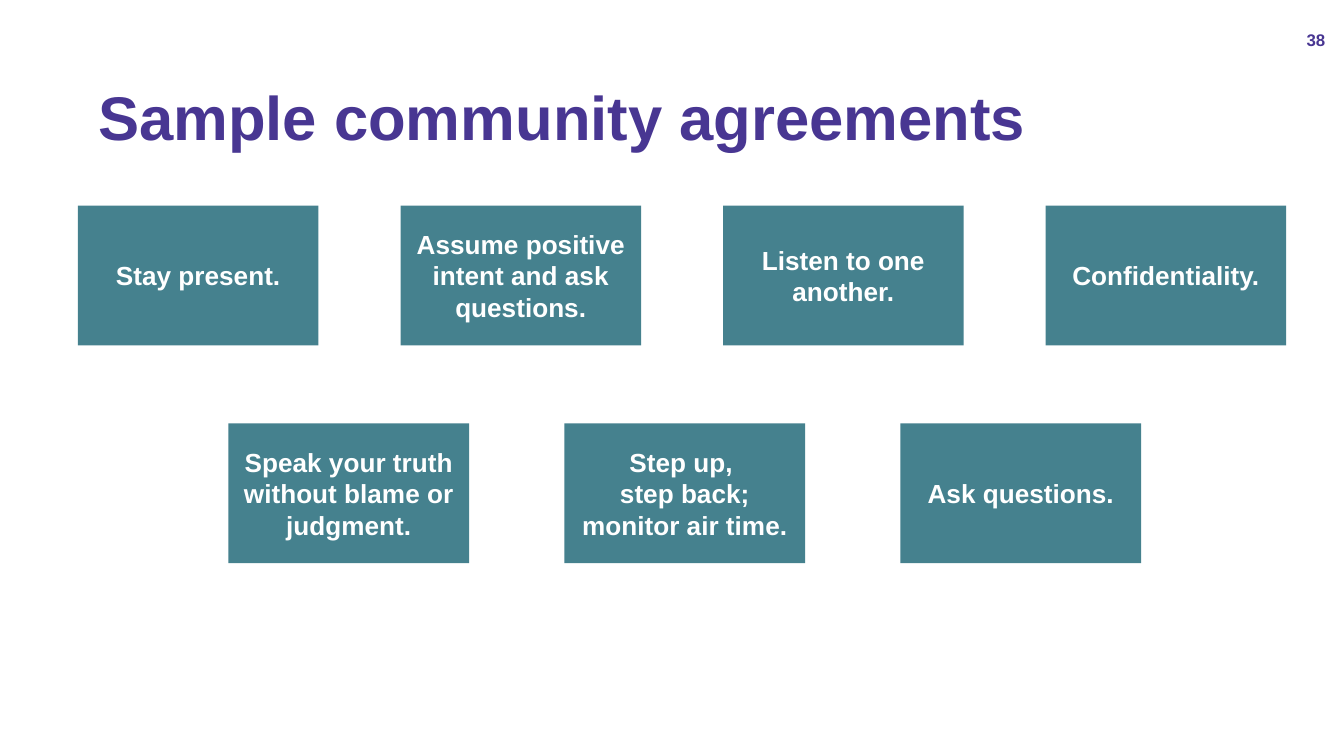
from dataclasses import dataclass

from pptx import Presentation
from pptx import util as u
from pptx.dml.color import RGBColor
from pptx.enum import shapes, text

COLORS = {"purple": "483692", "teal": "45818E", "white": "FFFFFF"}
FONT = "Arial"
CARD_W, CARD_H = 1.79, 1.04


@dataclass
class TextStyle:
    size: float
    color: str
    align: text.PP_ALIGN
    inset_x: float
    inset_y: float
    line_spacing: float = 1.0


@dataclass
class CardRow:
    left: float
    top: float
    pitch: float
    labels: list[str]


TITLE = TextStyle(33, "purple", text.PP_ALIGN.LEFT, 0.04, 0.02, 1.05)
CARD = TextStyle(14, "white", text.PP_ALIGN.CENTER, 0.1, 0.1)
NUMBER = TextStyle(9, "purple", text.PP_ALIGN.RIGHT, 0.07, 0.04)

ROWS = [
    CardRow(0.58, 1.53, 2.4, [
        "Stay present.",
        "Assume positive intent and ask questions.",
        "Listen to one another.",
        "Confidentiality.",
    ]),
    CardRow(1.7, 3.15, 2.5, [
        "Speak your truth without blame or judgment.",
        "Step up, \nstep back; monitor air time.",
        "Ask questions.",
    ]),
]


def rgb(name: str) -> RGBColor:
    return RGBColor.from_string(COLORS[name])


def write_text(sp, content: str, style: TextStyle) -> None:
    tf = sp.text_frame
    tf.word_wrap = True
    tf.vertical_anchor = text.MSO_ANCHOR.MIDDLE
    tf.margin_left = tf.margin_right = u.Inches(style.inset_x)
    tf.margin_top = tf.margin_bottom = u.Inches(style.inset_y)
    tf.text = content
    for p in tf.paragraphs:
        p.alignment = style.align
        p.line_spacing = style.line_spacing
        p.font.name = FONT
        p.font.size = u.Pt(style.size)
        p.font.bold = True
        p.font.color.rgb = rgb(style.color)


def add_label(s, left: float, top: float, width: float, height: float,
              content: str, style: TextStyle) -> None:
    sp = s.shapes.add_textbox(*map(u.Inches, (left, top, width, height)))
    write_text(sp, content, style)


def add_card_row(s, row: CardRow) -> None:
    for i, label in enumerate(row.labels):
        box = (row.left + i * row.pitch, row.top, CARD_W, CARD_H)
        sp = s.shapes.add_shape(shapes.MSO_SHAPE.RECTANGLE, *map(u.Inches, box))
        sp.shadow.inherit = False
        sp.fill.solid()
        sp.fill.fore_color.rgb = rgb("teal")
        sp.line.fill.background()
        write_text(sp, label, CARD)


def main() -> None:
    prs = Presentation()
    prs.slide_width = u.Inches(10)
    prs.slide_height = u.Inches(10 * 9 / 16)
    s = prs.slides.add_slide(prs.slide_layouts[6])
    s.background.fill.solid()
    s.background.fill.fore_color.rgb = rgb("white")
    add_label(s, 0.69, 0.3, 8.62, 1.09, "Sample community agreements", TITLE)
    for row in ROWS:
        add_card_row(s, row)
    add_label(s, 9.51, 0.15, 0.42, 0.3, "38", NUMBER)
    prs.save("out.pptx")


if __name__ == "__main__":
    main()
